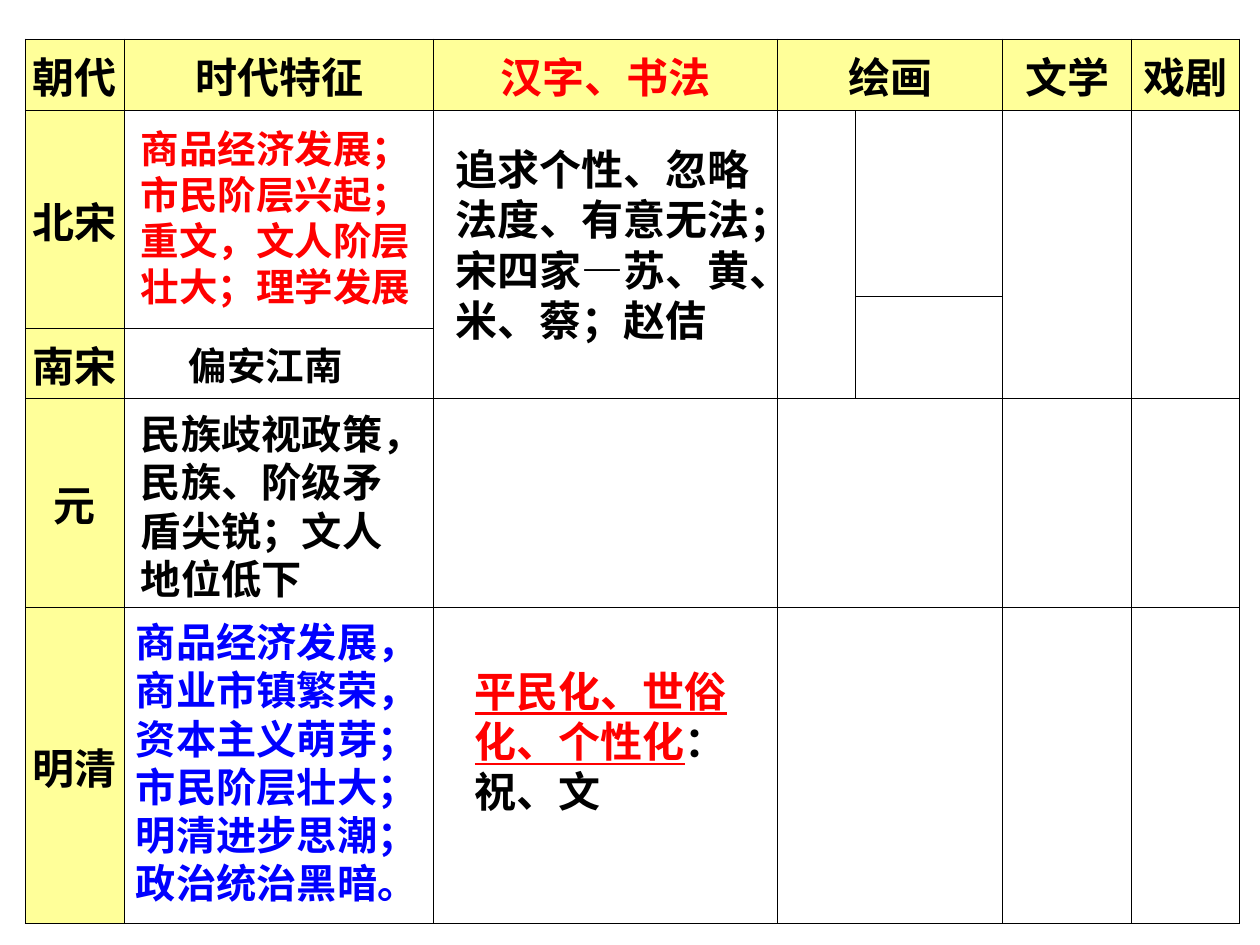
import pptx
import pptx.util
import pptx.dml.color
import pptx.enum.text
import pptx.oxml.ns
import lxml.etree

PX = 9144  # EMU per px, 100 px to the inch
THEME = {
    "font": "Noto Sans CJK SC",
    "black": "000000", "red": "FF0000", "blue": "0000FF", "head": "FFFF99",
    "big": 24, "mid": 23, "small": 22, "empty": 8, "line": 0.5,
}
qn = pptx.oxml.ns.qn
align = pptx.enum.text.PP_ALIGN


def style(run, size, color, under=False):
    font = run.font
    font.name = THEME["font"]
    font.size = pptx.util.Pt(THEME[size])
    font.bold = True
    font.color.rgb = pptx.dml.color.RGBColor.from_string(THEME[color])
    if under:
        font.underline = True
    latin = run._r.rPr.find(qn("a:latin"))
    east = lxml.etree.Element(qn("a:ea"), typeface=THEME["font"])
    latin.addnext(east)


def border(cell):
    props = cell._tc.get_or_add_tcPr()
    width = str(pptx.util.Pt(THEME["line"]))
    for spot, side in enumerate(("lnL", "lnR", "lnT", "lnB")):
        line = lxml.etree.Element(qn("a:" + side), w=width)
        fill = lxml.etree.SubElement(line, qn("a:solidFill"))
        lxml.etree.SubElement(fill, qn("a:srgbClr"), val=THEME["black"])
        props.insert(spot, line)


deck = pptx.Presentation()
deck.slide_width, deck.slide_height = 1000 * PX, 750 * PX
slide = deck.slides.add_slide(deck.slide_layouts[6])

# Table grid
cols = [79, 245, 273, 62, 117, 102, 86]
rows = [57, 147, 26, 55, 166, 251]
frame = slide.shapes.add_table(len(rows), len(cols), 20 * PX, 31 * PX,
                               sum(cols) * PX, sum(rows) * PX)
table = frame.table
table.first_row = table.horz_banding = False
for col, width in zip(table.columns, cols):
    col.width = width * PX
for row, height in zip(table.rows, rows):
    row.height = height * PX

# Table wording: (row, column) to text, size, colour
words = {(0, col): (text, "big", "black") for col, text in
         ((0, "朝代"), (1, "时代特征"), (3, "绘画"), (5, "文学"), (6, "戏剧"))}
words[0, 2] = ("汉字、书法", "big", "red")
for row, text in ((1, "北宋"), (3, "南宋"), (4, "元"), (5, "明清")):
    words[row, 0] = (text, "big", "black")
words[3, 1] = ("偏安江南", "small", "black")

# Cells: yellow for the first row and first column
for row in range(len(rows)):
    for col in range(len(cols)):
        cell = table.cell(row, col)
        cell.margin_left = cell.margin_right = cell.margin_top = PX
        cell.margin_bottom = 0
        cell.vertical_anchor = pptx.enum.text.MSO_ANCHOR.MIDDLE
        if row == 0 or col == 0:
            cell.fill.solid()
            cell.fill.fore_color.rgb = pptx.dml.color.RGBColor.from_string(THEME["head"])
        else:
            cell.fill.background()
        border(cell)
        para = cell.text_frame.paragraphs[0]
        if (row, col) in words:
            text, size, color = words[row, col]
            para.text = text
            para.alignment = align.CENTER
            style(para.runs[0], size, color)
        else:
            lxml.etree.SubElement(para._p, qn("a:endParaRPr"),
                                  sz=str(THEME["empty"] * 100))

# The one indented entry
para = table.cell(3, 1).text_frame.paragraphs[0]
para.alignment = align.LEFT
para.level = 1
para._p.get_or_add_pPr().set("marL", str(50 * PX))
para._p.get_or_add_pPr().set("indent", "0")

# Merged cells: top, left, bottom, right
spans = [(0, 3, 0, 4), (1, 0, 2, 0), (1, 1, 2, 1), (2, 4, 3, 4),
         (4, 3, 4, 4), (5, 3, 5, 4)]
spans += [(1, col, 3, col) for col in (2, 3, 5, 6)]
for top, left, low, right in spans:
    table.cell(top, left).merge(table.cell(low, right))

# Notes over the table: place, size, then runs of text, colour, underline
notes = [
    ((102, 94, 236, 158), "small",
     [("商品经济发展；市民阶层兴起； 重文，文人阶层壮大；理学发展", "red", False)]),
    ((98, 485, 253, 240), "mid",
     [("商品经济发展，商业市镇繁荣，资本主义萌芽；市民阶层壮大；明清进步思潮；政治统治黑暗。",
       "blue", False)]),
    ((352, 109, 258, 172), "big",
     [("追求个性、忽略法度、有意无法；宋四家—苏、黄、米、蔡；赵佶", "black", False)]),
    ((102, 320, 227, 165), "mid",
     [("民族歧视政策，民族、阶级矛盾尖锐；文人地位低下", "black", False)]),
    ((367, 523, 242, 131), "big",
     [("平民化、世俗化、个性化", "red", True), ("：祝、文", "black", False)]),
]
for place, size, parts in notes:
    box = slide.shapes.add_textbox(*(n * PX for n in place))
    body = box.text_frame
    body.word_wrap = True
    body.auto_size = pptx.enum.text.MSO_AUTO_SIZE.SHAPE_TO_FIT_TEXT
    for text, color, under in parts:
        run = body.paragraphs[0].add_run()
        run.text = text
        style(run, size, color, under)

deck.save("out.pptx")
